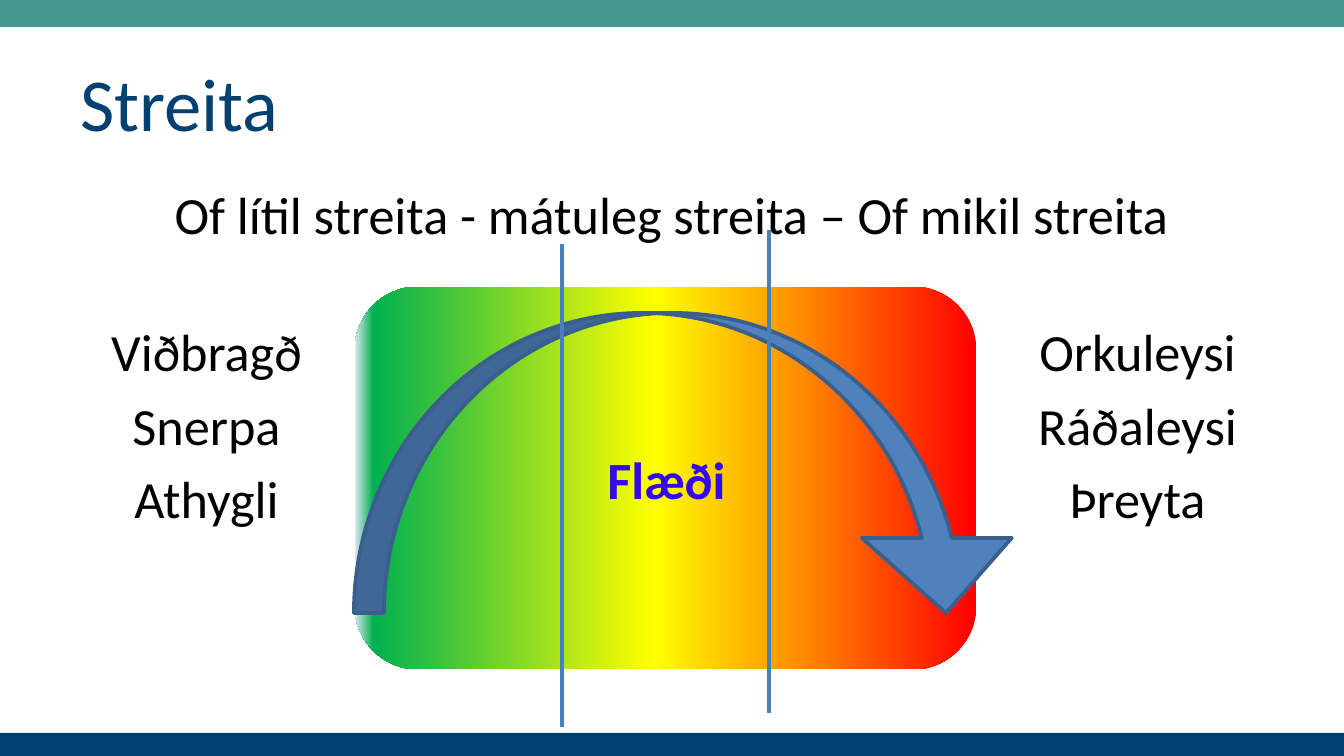
from lxml import etree
from pptx import Presentation
from pptx.dml.color import RGBColor
from pptx.enum.shapes import MSO_CONNECTOR as CONN, MSO_SHAPE as SHAPE
from pptx.enum.text import MSO_ANCHOR as ANCHOR, PP_ALIGN as ALIGN
from pptx.oxml import parse_xml
from pptx.oxml.ns import nsdecls, qn
from pptx.util import Pt

PX = 914400 / 134.4
COLORS = {
    "teal": "44978D", "navy": "014171", "black": "000000", "violet": "3409ED",
    "arrow": "4F81BD", "outline": "3A5F8C", "divider": "4B7EBC",
    "red": "FF0000", "yellow": "FFFF00", "green": "00B050", "pale": "E1E8F5",
}


def px(*lengths):
    return [round(n * PX) for n in lengths]


def write(sp, lines, size=28, color="black", bold=False, align=ALIGN.CENTER, anchor=ANCHOR.TOP):
    tf = sp.text_frame
    tf.word_wrap = True
    tf.vertical_anchor = anchor
    for i, line in enumerate(lines):
        p = tf.paragraphs[0] if i == 0 else tf.add_paragraph()
        p.alignment = align
        if i == 0:
            p.space_before = Pt(0)
        pPr = p._p.get_or_add_pPr()
        pPr.set("marL", "0")
        pPr.set("indent", "0")
        etree.SubElement(pPr, qn("a:buNone"))
        r = p.add_run()
        r.text = line
        r.font.name, r.font.size, r.font.bold = "Calibri", Pt(size), bold
        r.font.color.rgb = RGBColor.from_string(COLORS[color])


prs = Presentation()
prs.slide_width, prs.slide_height = px(1344, 756)
s = prs.slides.add_slide(prs.slide_layouts[4])
shapes = s.shapes
title, *bodies, spare = s.placeholders
spare._element.getparent().remove(spare._element)

# Bands at the top and bottom
for box, color in [((-5, 0, 1355, 27), "teal"), ((0, 733, 1344, 27), "navy")]:
    sp = shapes.add_shape(SHAPE.RECTANGLE, *px(*box))
    sp.shadow.inherit = False
    sp.fill.solid()
    sp.fill.fore_color.rgb = RGBColor.from_string(COLORS[color])
    sp.line.fill.background()

# Stress scale: pale and green on the left, red on the right
scale = shapes.add_shape(SHAPE.ROUNDED_RECTANGLE, *px(474, 167, 383, 622))
scale.rotation = 270
scale.shadow.inherit = False
scale.line.fill.background()
stops = "".join(
    f'<a:gs pos="{pos}000"><a:srgbClr val="{COLORS[color]}"/></a:gs>'
    for pos, color in [(0, "red"), (52, "yellow"), (97, "green"), (100, "pale")])
scale._element.spPr.find(qn("a:prstGeom")).addnext(parse_xml(
    f'<a:gradFill {nsdecls("a")} rotWithShape="1"><a:gsLst>{stops}</a:gsLst>'
    '<a:lin ang="16200000" scaled="0"/></a:gradFill>'))

# Curved arrow across the scale
arrow = shapes.add_shape(SHAPE.CURVED_DOWN_ARROW, *px(354, 313, 667, 300))
for i, value in enumerate([0.10, 0.5, 0.25]):
    arrow.adjustments[i] = value
arrow.shadow.inherit = False
arrow.fill.solid()
arrow.fill.fore_color.rgb = RGBColor.from_string(COLORS["arrow"])
arrow.line.color.rgb = RGBColor.from_string(COLORS["outline"])
arrow.line.width = Pt(2)

# Dividers between the three zones
for x, top in [(562, 244), (769, 230)]:
    line = shapes.add_connector(CONN.STRAIGHT, *px(x, top, x, top + 483))
    line.line.color.rgb = RGBColor.from_string(COLORS["divider"])
    line.line.width = Pt(2.25)
    etree.SubElement(line._element.spPr, qn("a:effectLst"))

# Title, heading and side lists, in front of the drawing
flow = shapes.add_textbox(*px(587, 441, 159, 77))
texts = [
    (title, (67, 39, 1210, 126), ["Streita"],
     dict(size=40, color="navy", align=ALIGN.LEFT, anchor=ANCHOR.MIDDLE)),
    (bodies[0], (67, 176, 1208, 499),
     ["Of lítil streita - mátuleg streita – Of mikil streita"], {}),
    (flow, (587, 441, 159, 77), ["Flæði"], dict(color="violet", bold=True)),
    (bodies[1], (37, 313, 339, 477), ["Viðbragð", "Snerpa", "Athygli"], {}),
    (bodies[2], (968, 313, 339, 477), ["Orkuleysi", "Ráðaleysi", "Þreyta"], {}),
]
for sp, box, lines, style in texts:
    sp.left, sp.top, sp.width, sp.height = px(*box)
    write(sp, lines, **style)
    shapes._spTree.append(sp._element)

prs.save("out.pptx")
